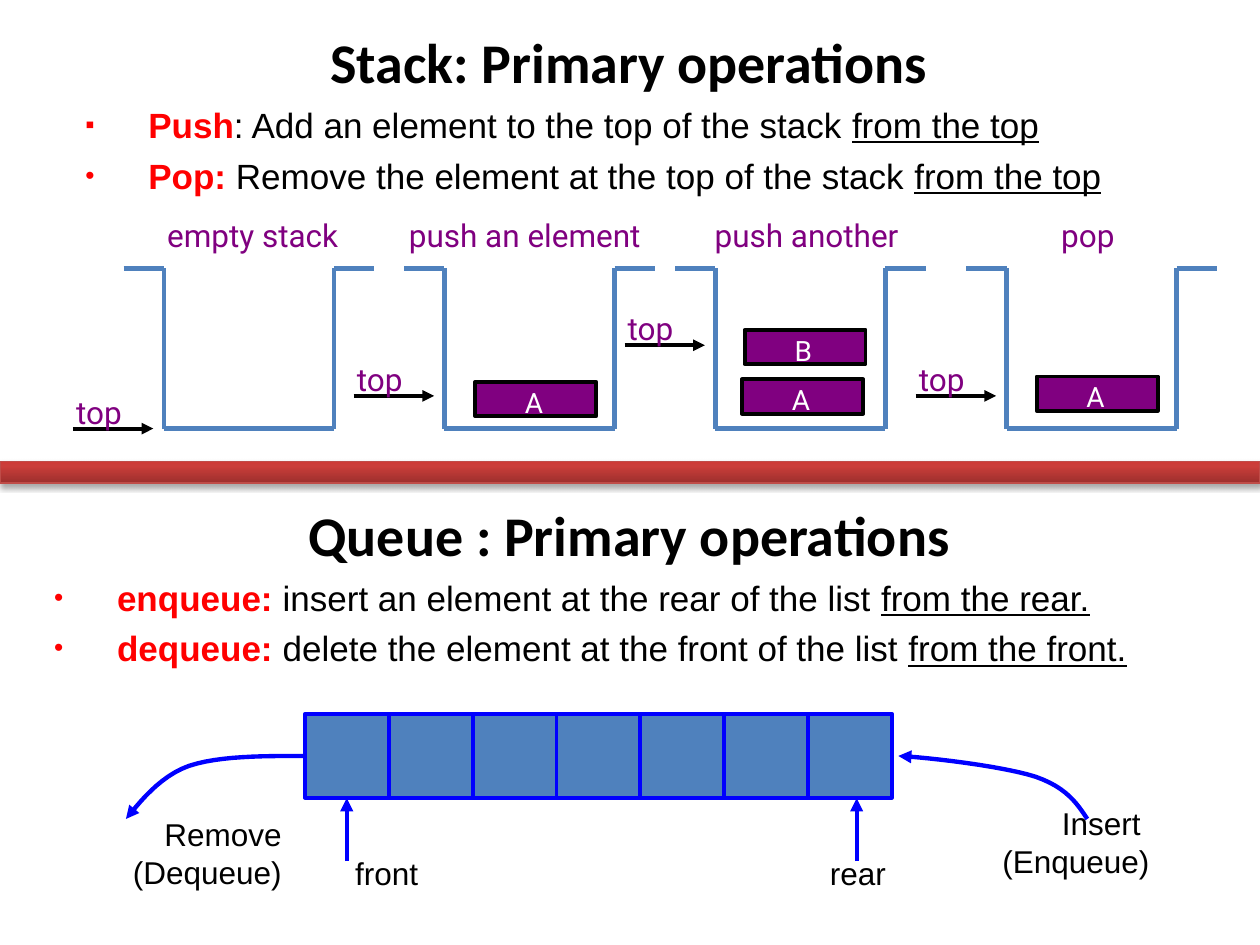
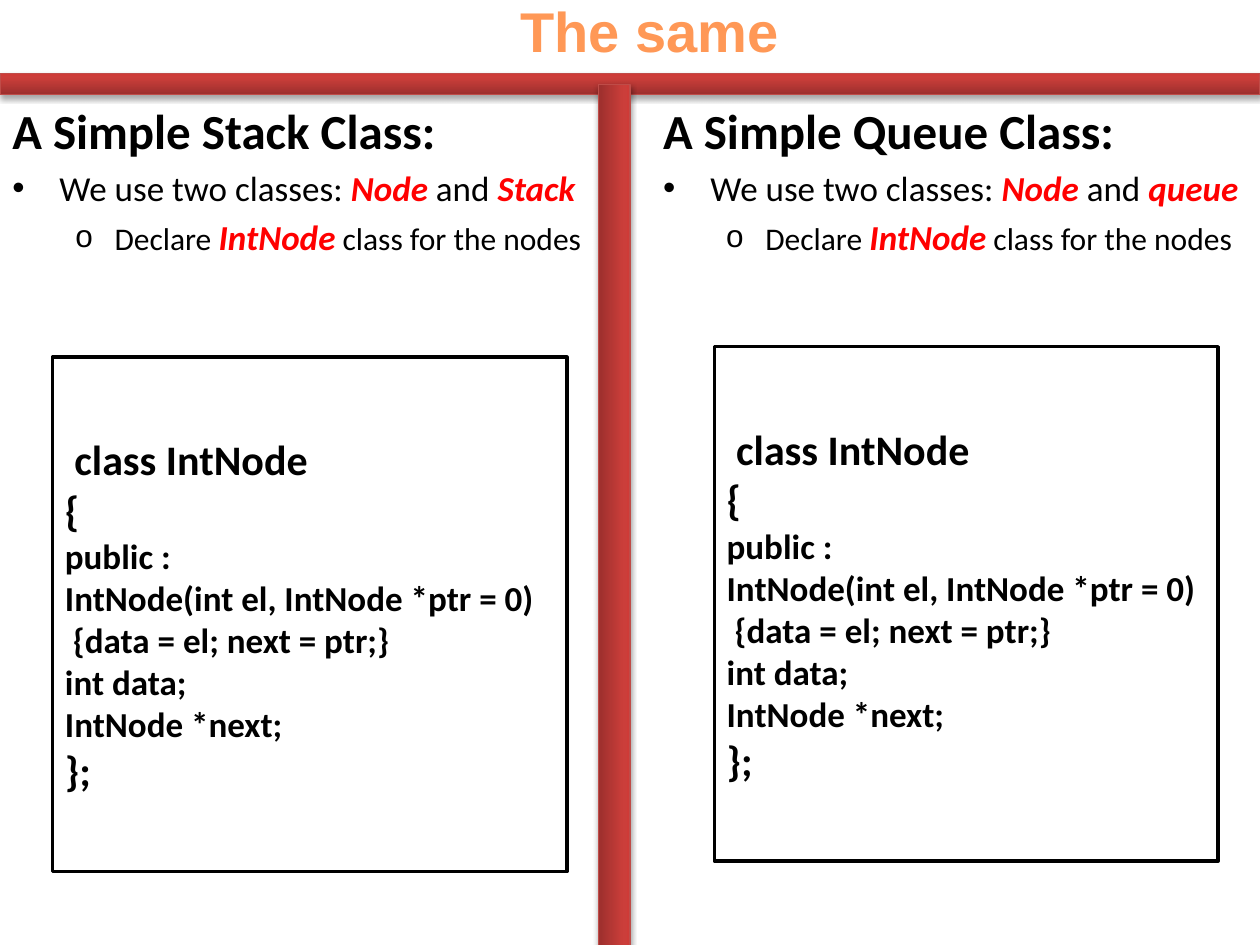
from itertools import pairwise

from lxml import etree
from pptx import Presentation
from pptx.dml.color import RGBColor as Rgb
from pptx.enum.shapes import MSO_CONNECTOR as Connector, MSO_SHAPE as Shape
from pptx.enum.text import MSO_ANCHOR as Anchor, PP_ALIGN as Align
from pptx.oxml import parse_xml
from pptx.oxml.ns import nsdecls, qn
from pptx.util import Cm, Pt

COLORS = {
    "black": "000000", "white": "FFFFFF", "red": "FF0000", "purple": "800080",
    "steel": "4F81BD", "blue": "0000FF", "orange": "FF9856", "band_line": "BF4C48",
    "band_dark": "9C2F2D", "band_mid": "CB3E3A", "band_light": "CE3B37",
}


def write(shape, paragraphs, wrap=True, align=Align.LEFT, **style):
    frame = shape.text_frame
    frame.word_wrap = wrap
    for index, (runs, layout) in enumerate(paragraphs):
        paragraph = frame.add_paragraph() if index else frame.paragraphs[0]
        paragraph.alignment = layout.get("align", align)
        paragraph.space_before = Pt(layout.get("space", 0))
        if "bullet" in layout:
            properties = paragraph._p.get_or_add_pPr()
            properties.set("marL", str(Cm(layout["left"])))
            properties.set("indent", str(-Cm(layout["hanging"])))
            size = etree.SubElement(properties, qn("a:buSzPct"))
            size.set("val", str(layout.get("bullet_size", 100) * 1000))
            etree.SubElement(properties, qn("a:buFont")).set("typeface", "Arial")
            etree.SubElement(properties, qn("a:buChar")).set("char", layout["bullet"])
        for text, changes in runs:
            look = {"font": "Arial", "color": "black", **style, **changes}
            for number, line in enumerate(text.split("\n")):
                if number:
                    paragraph.add_line_break()
                run = paragraph.add_run()
                run.text = line
                run.font.name = look["font"]
                run.font.size = Pt(look["size"])
                run.font.bold = look.get("bold", False)
                run.font.italic = look.get("italic", False)
                run.font.underline = look.get("underline", False)
                run.font.color.rgb = Rgb.from_string(COLORS[look["color"]])


def outline(shape, color, width, fill=None, arrow=False):
    shape.line.color.rgb = Rgb.from_string(COLORS[color])
    shape.line.width = Pt(width)
    if fill:
        shape.fill.solid()
        shape.fill.fore_color.rgb = Rgb.from_string(COLORS[fill])
    if arrow:
        etree.SubElement(shape.line._get_or_add_ln(), qn("a:tailEnd")).set("type", "triangle")
    etree.SubElement(shape._element.spPr, qn("a:effectLst"))


presentation = Presentation()
presentation.slide_width, presentation.slide_height = Cm(25.4), Cm(19.05)
blank = presentation.slide_layouts[6]
operations_slide = presentation.slides.add_slide(blank)
classes_slide = presentation.slides.add_slide(blank)

bands = [
    (operations_slide, (0, 9.31, 25.4, 0.43), 0),
    (classes_slide, (0, 1.48, 25.4, 0.43), 0),
    (classes_slide, (3.07, 10.69, 18.62, 0.64), 90),
]
for slide, box, rotation in bands:
    band = slide.shapes.add_shape(Shape.RECTANGLE, *map(Cm, box))
    band.rotation = rotation
    outline(band, "band_line", 0.75)
    stops = "".join(
        f'<a:gs pos="{position}000"><a:srgbClr val="{COLORS[name]}"/></a:gs>'
        for position, name in [(0, "band_dark"), (80, "band_mid"), (100, "band_light")]
    )
    properties = band._element.spPr
    properties.insert(2, parse_xml(
        f'<a:gradFill {nsdecls("a")} rotWithShape="1"><a:gsLst>{stops}</a:gsLst>'
        '<a:lin ang="16200000" scaled="0"/></a:gradFill>'
    ))
    properties.find(qn("a:effectLst")).append(parse_xml(
        f'<a:outerShdw {nsdecls("a")} blurRad="40000" dist="23000" dir="5400000" rotWithShape="0">'
        f'<a:srgbClr val="{COLORS["black"]}"><a:alpha val="35000"/></a:srgbClr></a:outerShdw>'
    ))

shapes = operations_slide.shapes
sections = [
    ((1.47, 0.43, 22.43, 4.88), "Stack: Primary operations", [
        ("▪", "Push", ": Add an element to the top of the stack ", "from the top"),
        ("•", "Pop: ", "Remove the element at the top of the stack ", "from the top"),
    ]),
    ((0.84, 9.96, 23.7, 5.21), "Queue : Primary operations", [
        ("•", "enqueue: ", "insert an element at the rear of the list ", "from the rear."),
        ("•", "dequeue: ", "delete the element at the front of the list ", "from the front."),
    ]),
]
for box, title, operations in sections:
    paragraphs = [([(title, {"size": 32, "font": "Calibri", "bold": True})], {"align": Align.CENTER})]
    for bullet, name, action, place in operations:
        paragraphs.append((
            [(name, {"color": "red", "bold": True}), (action, {}), (place, {"underline": True})],
            {"bullet": bullet, "bullet_size": 75, "left": 1.27, "hanging": 1.27, "space": 5},
        ))
    write(shapes.add_textbox(*map(Cm, box)), paragraphs, size=20)

RIM, FLOOR, BRIM, STACK_WIDTH = 5.41, 8.64, 0.81, 3.43
stacks = [
    (2.49, "empty stack", 3.05, 4.09, 8.64, []),
    (8.15, "push an element", 7.85, 5.46, 7.98, [("A", 9.58, 7.7)]),
    (13.61, "push another", 14.05, 4.42, 6.96, [("A", 14.96, 7.65), ("B", 15.01, 6.65)]),
    (19.48, "pop", 21.13, 1.6, 7.98, [("A", 20.9, 7.59)]),
]
for left, caption, caption_left, caption_width, top, elements in stacks:
    inner_left, inner_right = left + BRIM, left + BRIM + STACK_WIDTH
    walls = [(left, RIM), (inner_left, RIM), (inner_left, FLOOR),
             (inner_right, FLOOR), (inner_right, RIM), (inner_right + BRIM, RIM)]
    for start, end in pairwise(walls):
        wall = shapes.add_connector(Connector.STRAIGHT, *map(Cm, start + end))
        outline(wall, "steel", 2.5)
    pointer_left = left - 1.02
    pointer = shapes.add_connector(
        Connector.STRAIGHT, Cm(pointer_left), Cm(top), Cm(pointer_left + 1.62), Cm(top))
    outline(pointer, "black", 2.25, arrow=True)
    labels = [
        (caption, (caption_left, 4.24, caption_width, 0.89)),
        ("top", (pointer_left - 0.2, top - 0.85, 1.45, 0.89)),
    ]
    for text, box in labels:
        write(shapes.add_textbox(*map(Cm, box)), [([(text, {})], {})], wrap=False,
              align=Align.CENTER, size=18, font="Roboto", color="purple")
    for name, x, y in elements:
        element = shapes.add_shape(Shape.RECTANGLE, Cm(x), Cm(y), Cm(2.44), Cm(0.69))
        outline(element, "black", 2.25, fill="purple")
        letter = shapes.add_textbox(Cm(x + 0.74), Cm(y - 0.06), Cm(0.89), Cm(0.74))
        write(letter, [([(name, {})], {})], align=Align.CENTER,
              size=16, font="Roboto", color="white")

CELL = 1.69
for index in range(7):
    cell = shapes.add_shape(
        Shape.RECTANGLE, Cm(6.15 + index * CELL), Cm(14.39), Cm(CELL), Cm(CELL))
    outline(cell, "blue", 2.25, fill="steel")

curves = [
    [(6.15, 15.24), (5.28, 15.24), (4.42, 15.24), (3.81, 15.44),
     (3.2, 15.66), (2.79, 16.21), (2.54, 16.51)],
    [(21.92, 16.51), (21.72, 16.21), (21.51, 15.88), (20.88, 15.66),
     (20.24, 15.45), (18.72, 15.27), (18.11, 15.24)],
]
STEPS = 12
for controls in curves:
    builder = shapes.build_freeform(*map(Cm, controls[0]))
    points = []
    for first in (0, 3):
        for step in range(1, STEPS + 1):
            t = step / STEPS
            weights = [(1 - t) ** 3, 3 * t * (1 - t) ** 2, 3 * t ** 2 * (1 - t), t ** 3]
            points.append(tuple(
                Cm(sum(weight * point[axis] for weight, point in zip(weights, controls[first:])))
                for axis in (0, 1)
            ))
    builder.add_line_segments(points, close=False)
    curve = builder.convert_to_shape()
    curve.fill.background()
    outline(curve, "blue", 2.5, arrow=True)

queue_labels = [
    ("Insert \n(Enqueue)", (18.97, 16.09, 4.45, 1.96)),
    ("Remove\n(Dequeue)", (1.48, 16.3, 4.45, 1.96)),
    ("rear", (16.2, 17.09, 1.91, 1.09)),
    ("front", (5.93, 17.09, 2.75, 1.09)),
]
for text, box in queue_labels:
    write(shapes.add_textbox(*map(Cm, box)), [([(text, {})], {})], align=Align.RIGHT, size=18)

for x in (6.99, 17.27):
    marker = shapes.add_connector(Connector.STRAIGHT, Cm(x), Cm(17.36), Cm(x), Cm(16.09))
    outline(marker, "blue", 2.5, arrow=True)

shapes = classes_slide.shapes
code = [
    ("{", 24), ("public :", 20), ("IntNode(int el, IntNode *ptr = 0)", 20),
    (" {data = el; next = ptr;}", 20), ("int data;", 20), ("IntNode *next;", 20), ("};", 24),
]
code_paragraphs = [([(" ", {"size": 24, "bold": False}), ("class IntNode", {"size": 24})], {})]
code_paragraphs += [([(line, {"size": size})], {}) for line, size in code]
keyword = {"color": "red", "bold": True, "italic": True}
columns = [
    (0, "A Simple Stack Class:", "Stack", (1.06, 7.2, 10.37, 10.37)),
    (13.12, "A Simple Queue Class:", "queue", (14.4, 6.99, 10.16, 10.37)),
]
for left, heading, class_name, code_box in columns:
    summary = shapes.add_textbox(Cm(left), Cm(1.91), Cm(22.86), Cm(14.48))
    write(summary, [
        ([(heading, {"size": 28, "bold": True})], {}),
        ([("We use two classes: ", {}), ("Node", keyword), (" and ", {}), (class_name, keyword)],
         {"bullet": "•", "left": 0.95, "hanging": 0.95, "space": 4}),
        ([("Declare ", {"size": 18}), ("IntNode", keyword),
          (" class for the nodes", {"size": 18})],
         {"bullet": "o", "left": 2.06, "hanging": 0.79, "space": 4}),
    ], size=20, font="Calibri")
    listing = shapes.add_shape(Shape.RECTANGLE, *map(Cm, code_box))
    outline(listing, "black", 2, fill="white")
    listing.text_frame.vertical_anchor = Anchor.MIDDLE
    write(listing, code_paragraphs, font="Calibri", bold=True)

title = shapes.add_textbox(Cm(10.06), Cm(-0.2), Cm(6.07), Cm(1.63))
write(title, [([("The same", {})], {})], wrap=False, align=Align.CENTER,
      size=32, color="orange", bold=True)

presentation.save("out.pptx")
